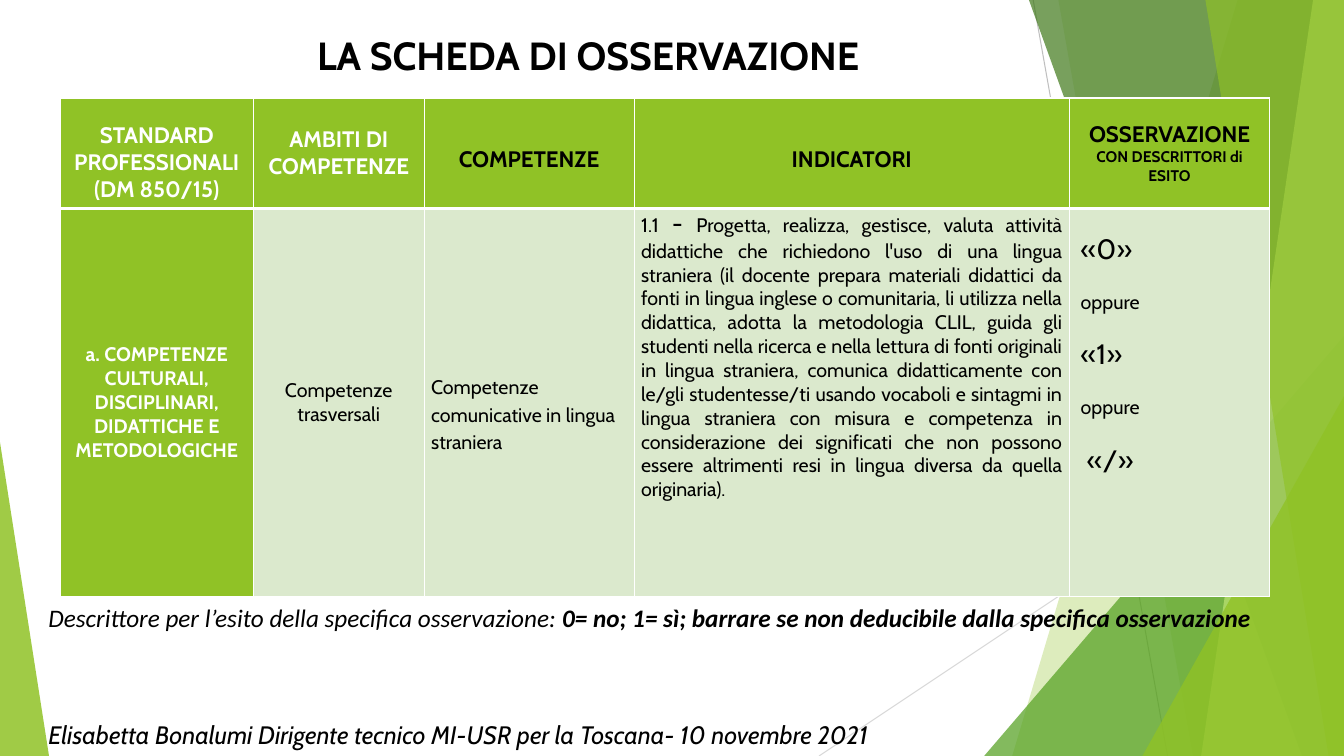
from pptx import Presentation
from pptx.dml.color import RGBColor
from pptx.enum.shapes import MSO_CONNECTOR, MSO_SHAPE
from pptx.enum.text import MSO_ANCHOR as ANCHOR, PP_ALIGN as ALIGN
from pptx.oxml import parse_xml
from pptx.oxml.ns import nsdecls, qn
from pptx.util import Pt

GREEN = RGBColor(0x90, 0xC2, 0x26)
MID_GREEN = RGBColor(0x54, 0xA0, 0x21)
DARK_GREEN = RGBColor(0x3F, 0x78, 0x19)
LIME = RGBColor(0xC0, 0xE4, 0x74)
PALE_GREEN = RGBColor(0xDB, 0xE9, 0xCD)
GRAY = RGBColor(0xBF, 0xBF, 0xBF)
LIGHT_GRAY = RGBColor(0xD9, 0xD9, 0xD9)
BLACK = RGBColor(0, 0, 0)
WHITE = RGBColor(0xFF, 0xFF, 0xFF)
WIDTH, HEIGHT = 960, 540


def format_run(run, size, color=BLACK, bold=False, italic=False, name="Cabin"):
    font = run.font
    font.name, font.size, font.bold, font.italic = name, Pt(size), bold, italic
    font.color.rgb = color


def add_border(cell, side, width):
    cell._tc.get_or_add_tcPr().append(parse_xml(
        f'<a:{side} {nsdecls("a")} w="{Pt(width)}"><a:solidFill>'
        f'<a:srgbClr val="{WHITE}"/></a:solidFill></a:{side}>'))


presentation = Presentation()
presentation.slide_width, presentation.slide_height = Pt(WIDTH), Pt(HEIGHT)
slide = presentation.slides.add_slide(presentation.slide_layouts[5])
shapes = slide.shapes

# Thin lines in the background
for x1, y1, x2, y2, color in [(738, 0, 834, HEIGHT, GRAY),
                              (WIDTH, 290, 585, HEIGHT, LIGHT_GRAY)]:
    line = shapes.add_connector(MSO_CONNECTOR.STRAIGHT, Pt(x1), Pt(y1), Pt(x2), Pt(y2))
    line.line.color.rgb = color
    line.line.width = Pt(0.75)
    line._element.spPr.append(parse_xml(f'<a:effectLst {nsdecls("a")}/>'))

# Translucent facets: bands by top and bottom x, triangles by box and apex
facets = [
    ("band", (884, 723), GREEN, 30),
    ("band", (756, 852), GREEN, 20),
    ("triangle", (703, 240, 257, 300, 1), MID_GREEN, 72),
    ("band", (735, 930), DARK_GREEN, 70),
    ("band", (938, 858), LIME, 70),
    ("band", (861, 949), GREEN, 65),
    ("triangle", (816, 283, 144, 257, 1), GREEN, 80),
    ("triangle", (0, 316, 35, 224, 0), GREEN, 85),
]
for kind, geometry, color, opacity in facets:
    if kind == "band":
        top_x, bottom_x = geometry
        builder = shapes.build_freeform(Pt(top_x), 0)
        builder.add_line_segments([(Pt(WIDTH), 0), (Pt(WIDTH), Pt(HEIGHT)),
                                   (Pt(bottom_x), Pt(HEIGHT))])
        facet = builder.convert_to_shape()
    else:
        *box, apex = geometry
        facet = shapes.add_shape(MSO_SHAPE.ISOSCELES_TRIANGLE, *map(Pt, box))
        facet.adjustments[0] = apex
    facet.shadow.inherit = False
    facet.line.fill.background()
    facet.fill.solid()
    facet.fill.fore_color.rgb = color
    color_element = next(facet._element.spPr.iter(qn("a:srgbClr")))
    color_element.append(parse_xml(f'<a:alpha {nsdecls("a")} val="{opacity * 1000}"/>'))

# Title
title = shapes.title
title.left, title.top, title.width, title.height = Pt(200), Pt(19), Pt(440), Pt(41)
title.text_frame.text = "LA SCHEDA DI OSSERVAZIONE"
title.text_frame.vertical_anchor = ANCHOR.MIDDLE
title.text_frame.paragraphs[0].alignment = ALIGN.CENTER
format_run(title.text_frame.paragraphs[0].runs[0], 28, bold=True)

# Table: each cell has paragraphs of (text, size) runs,
# then colour, bold, alignment, anchor and top margin
indicator = (
    "Progetta, realizza, gestisce, valuta attività didattiche che richiedono l'uso di una "
    "lingua straniera (il docente prepara materiali didattici da fonti in lingua inglese o "
    "comunitaria, li utilizza nella didattica, adotta la metodologia CLIL, guida gli studenti "
    "nella ricerca e nella lettura di fonti originali in lingua straniera, comunica "
    "didatticamente con le/gli studentesse/ti usando vocaboli e sintagmi in lingua straniera "
    "con misura e competenza in considerazione dei significati che non possono essere "
    "altrimenti resi in lingua diversa da quella originaria).")
rows = [
    [
        ([[("STANDARD PROFESSIONALI", 16)], [("(DM 850/15)", 16)]],
         WHITE, True, ALIGN.CENTER, ANCHOR.TOP, 17),
        ([[("AMBITI DI COMPETENZE", 16)]], WHITE, True, ALIGN.CENTER, ANCHOR.MIDDLE, 0),
        ([[("COMPETENZE", 16)]], BLACK, True, ALIGN.CENTER, ANCHOR.TOP, 34),
        ([[("INDICATORI", 16)]], BLACK, True, ALIGN.CENTER, ANCHOR.TOP, 34),
        ([[("OSSERVAZIONE", 16)], [("CON DESCRITTORI di ESITO", 11)]],
         BLACK, True, ALIGN.CENTER, ANCHOR.MIDDLE, 0),
    ],
    [
        ([[("a. COMPETENZE CULTURALI,", 14)], [("DISCIPLINARI,", 14)],
          [("DIDATTICHE E METODOLOGICHE", 14)]],
         WHITE, True, ALIGN.CENTER, ANCHOR.MIDDLE, 0),
        ([[("Competenze trasversali", 14)]], BLACK, False, ALIGN.CENTER, ANCHOR.MIDDLE, 0),
        ([[("Competenze comunicative in lingua straniera", 14)]],
         BLACK, False, ALIGN.LEFT, ANCHOR.TOP, 117),
        ([[("1.1", 14), (" - ", 18), (indicator, 14)]],
         BLACK, False, ALIGN.JUSTIFY, ANCHOR.TOP, 0),
        ([[("«0»", 20)], [("oppure", 14)], [("«1»", 20)], [("oppure", 14)], [(" «/»", 20)]],
         BLACK, False, ALIGN.LEFT, ANCHOR.TOP, 17),
    ],
]
column_widths = [138, 122, 150, 311, 143]
row_heights = [79, 277]
table = shapes.add_table(len(row_heights), len(column_widths), Pt(43), Pt(70),
                         Pt(sum(column_widths)), Pt(sum(row_heights))).table
for column, width in zip(table.columns, column_widths):
    column.width = Pt(width)
for row, height in zip(table.rows, row_heights):
    row.height = Pt(height)

for row_index, row in enumerate(rows):
    for column_index, (lines, color, bold, alignment, anchor, top) in enumerate(row):
        cell = table.cell(row_index, column_index)
        header = row_index == 0
        for side, width in [("lnL", 1), ("lnR", 1), ("lnT", 1 if header else 3),
                            ("lnB", 3 if header else 1)]:
            add_border(cell, side, width)
        cell.fill.solid()
        cell.fill.fore_color.rgb = GREEN if header or column_index == 0 else PALE_GREEN
        cell.margin_left = cell.margin_right = Pt(5)
        cell.margin_top, cell.margin_bottom = Pt(top), 0
        cell.vertical_anchor = anchor
        cell.text_frame.text = "\n".join("".join(text for text, _ in line) for line in lines)
        for paragraph, line in zip(cell.text_frame.paragraphs, lines):
            paragraph.alignment = alignment
            paragraph.text = ""
            for text, size in line:
                run = paragraph.add_run()
                run.text = text
                format_run(run, size, color, bold)

# Spacing of the competence and outcome cells
table.cell(1, 2).text_frame.paragraphs[0].line_spacing = 1.15
outcome = table.cell(1, 4)
outcome.margin_left = Pt(8)
for paragraph in outcome.text_frame.paragraphs[1:]:
    paragraph.space_before = Pt(17)

# Legend and author line
captions = [
    (427, 904, "Calibri",
     [("Descrittore per l’esito della specifica osservazione: ", False),
      ("0= no; 1= sì; barrare se non deducibile dalla specifica osservazione", True)]),
    (510.5, 914, "Cabin",
     [("Elisabetta Bonalumi Dirigente tecnico MI-USR per la Toscana- 10 novembre 2021", False)]),
]
for top, width, name, runs in captions:
    caption = shapes.add_textbox(Pt(27.5), Pt(top), Pt(width), Pt(29))
    caption.text_frame.word_wrap = True
    for text, bold in runs:
        run = caption.text_frame.paragraphs[0].add_run()
        run.text = text
        format_run(run, 18, bold=bold, italic=True, name=name)

presentation.save("out.pptx")
